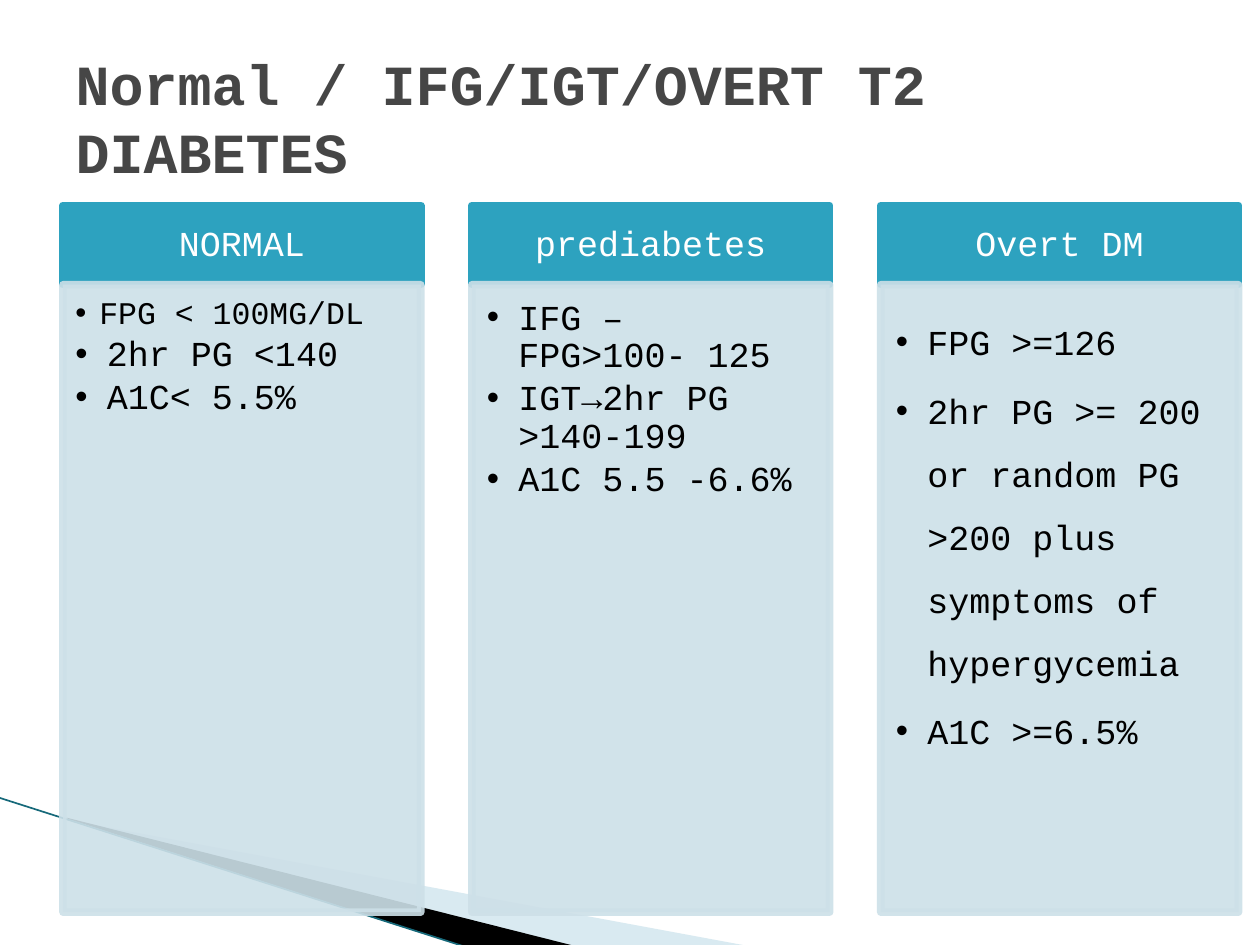
from dataclasses import dataclass

import pptx
import pptx.dml.color
import pptx.enum.shapes
import pptx.enum.text
import pptx.oxml
import pptx.oxml.ns
import pptx.presentation
import pptx.util
from pptx.util import Inches


@dataclass(frozen=True)
class Theme:
    font: str = "Courier New"
    title: str = "464646"
    header: str = "2DA2BF"
    header_text: str = "FFFFFF"
    panel: str = "CDE0E8"
    panel_text: str = "000000"
    wedge_light: str = "A0CBDC"
    wedge_dark: str = "000000"
    wedge_line: str = "16697A"
    title_size: float = 32.4
    text_size: float = 20
    small_size: float = 18
    border: float = 4.33


@dataclass(frozen=True)
class Bullet:
    text: str
    size: float = 20
    indent: float = 0.25


@dataclass(frozen=True)
class Column:
    heading: str
    bullets: tuple[Bullet, ...]
    insets: tuple[float, float, float, float] = (0.12, 0.12, 0.16, 0.17)
    line_spacing: float = 0.9


THEME = Theme()
COLUMNS = (
    Column("NORMAL",
           (Bullet("FPG < 100MG/DL", THEME.small_size, 0.19),
            Bullet("2hr PG <140"), Bullet("A1C< 5.5%")),
           insets=(0.1, 0.1, 0.14, 0.16)),
    Column("prediabetes",
           (Bullet("IFG – FPG>100- 125"), Bullet("IGT→2hr PG >140-199"),
            Bullet("A1C 5.5 -6.6%"))),
    Column("Overt DM",
           (Bullet("FPG >=126"),
            Bullet("2hr PG >= 200 or random PG >200 plus symptoms of hypergycemia"),
            Bullet("A1C >=6.5%")),
           line_spacing=1.5),
)
COLUMN_LEFT, COLUMN_STEP, COLUMN_WIDTH = 0.5, 3.245, 2.84
HEADER_TOP, HEADER_HEIGHT, PANEL_HEIGHT = 1.63, 0.63, 4.98


def rgb(value: str) -> pptx.dml.color.RGBColor:
    return pptx.dml.color.RGBColor.from_string(value)


def add_child(parent, tag: str, **attributes: str):
    child = pptx.oxml.parse_xml(f"<{tag} {pptx.oxml.ns.nsdecls('a')}/>")
    for name, value in attributes.items():
        child.set(name, value)
    parent.append(child)
    return child


def paint(fill, color: str, alpha: int = 100) -> None:
    """Give a fill a solid colour, with alpha as a percentage."""
    fill.solid()
    fill.fore_color.rgb = rgb(color)
    if alpha < 100:
        color_element = fill._xPr.find(".//" + pptx.oxml.ns.qn("a:srgbClr"))
        add_child(color_element, "a:alpha", val=str(alpha * 1000))


def write(paragraph, text: str, *, size: float, color: str, bold: bool = False,
          align=pptx.enum.text.PP_ALIGN.LEFT, line_spacing: float | None = None,
          space_after: float = 0, bullet_indent: float = 0) -> None:
    paragraph.alignment = align
    if line_spacing:
        paragraph.line_spacing = line_spacing
    paragraph.space_before = pptx.util.Pt(0)
    paragraph.space_after = pptx.util.Pt(space_after)
    if bullet_indent:
        properties = paragraph._p.get_or_add_pPr()
        properties.set("marL", str(Inches(bullet_indent)))
        properties.set("indent", str(-Inches(bullet_indent)))
        add_child(properties, "a:buFont", typeface="Arial")
        add_child(properties, "a:buChar", char="•")
    run = paragraph.add_run()
    run.text = text
    run.font.name = THEME.font
    run.font.size = pptx.util.Pt(size)
    run.font.bold = bold
    run.font.color.rgb = rgb(color)


def set_frame(frame, insets: tuple[float, float, float, float], anchor) -> None:
    """Wrap the text and set its left, top, right and bottom insets."""
    frame.word_wrap = True
    frame.auto_size = pptx.enum.text.MSO_AUTO_SIZE.NONE
    frame.vertical_anchor = anchor
    (frame.margin_left, frame.margin_top,
     frame.margin_right, frame.margin_bottom) = map(Inches, insets)


def add_box(slide, left: float, top: float, height: float, color: str, alpha: int = 100):
    box = slide.shapes.add_shape(
        pptx.enum.shapes.MSO_SHAPE.RECTANGLE,
        Inches(left), Inches(top), Inches(COLUMN_WIDTH), Inches(height))
    box.shadow.inherit = False
    paint(box.fill, color, alpha)
    paint(box.line.fill, color, alpha)
    box.line.width = pptx.util.Pt(THEME.border)
    add_child(box.line._ln, "a:round")
    return box


def add_column(slide, column: Column, left: float) -> None:
    header = add_box(slide, left, HEADER_TOP, HEADER_HEIGHT, THEME.header)
    set_frame(header.text_frame, (0.16, 0.09, 0.16, 0.09),
              pptx.enum.text.MSO_ANCHOR.MIDDLE)
    write(header.text_frame.paragraphs[0], column.heading, size=THEME.text_size,
          color=THEME.header_text, align=pptx.enum.text.PP_ALIGN.CENTER, line_spacing=0.9)

    panel = add_box(slide, left, HEADER_TOP + HEADER_HEIGHT, PANEL_HEIGHT, THEME.panel, 90)
    frame = panel.text_frame
    set_frame(frame, column.insets, pptx.enum.text.MSO_ANCHOR.TOP)
    for index, bullet in enumerate(column.bullets):
        paragraph = frame.add_paragraph() if index else frame.paragraphs[0]
        write(paragraph, bullet.text, size=bullet.size, color=THEME.panel_text,
              line_spacing=column.line_spacing, space_after=3,
              bullet_indent=bullet.indent)


def add_wedge(slide, points: list[tuple[float, float]], color: str, alpha: int = 100) -> None:
    start, *others = [(Inches(x), Inches(y)) for x, y in points]
    builder = slide.shapes.build_freeform(*start)
    builder.add_line_segments(others, close=True)
    wedge = builder.convert_to_shape()
    wedge.shadow.inherit = False
    paint(wedge.fill, color, alpha)
    wedge.line.fill.background()


def add_corner_decoration(slide) -> None:
    add_wedge(slide, [(0.55, 6.51), (5.95, 7.51), (4.56, 7.51), (0.55, 6.5)],
              THEME.wedge_light, 40)
    add_wedge(slide, [(0.53, 6.49), (4.57, 7.51), (3.72, 7.52), (0.54, 6.5)],
              THEME.wedge_dark)
    line = slide.shapes.add_connector(
        pptx.enum.shapes.MSO_CONNECTOR.STRAIGHT,
        Inches(-0.01), Inches(6.33), Inches(3.71), Inches(7.52))
    line.line.color.rgb = rgb(THEME.wedge_line)
    line.line.width = pptx.util.Pt(0.95)
    add_child(line._element.spPr, "a:effectLst")


def add_title(slide, text: str) -> None:
    title = slide.shapes.title
    title.left, title.top, title.width, title.height = map(Inches, (0.5, 0.3, 9, 1.25))
    set_frame(title.text_frame, (0.1, 0.05, 0.1, 0.05), pptx.enum.text.MSO_ANCHOR.MIDDLE)
    write(title.text_frame.paragraphs[0], text, size=THEME.title_size,
          color=THEME.title, bold=True)


def main() -> None:
    presentation = pptx.Presentation()
    presentation.slide_width, presentation.slide_height = Inches(10), Inches(7.5)
    slide = presentation.slides.add_slide(presentation.slide_layouts[5])
    add_corner_decoration(slide)
    for index, column in enumerate(COLUMNS):
        add_column(slide, column, COLUMN_LEFT + index * COLUMN_STEP)
    add_title(slide, "Normal / IFG/IGT/OVERT T2 DIABETES")
    presentation.save("out.pptx")


if __name__ == "__main__":
    main()
